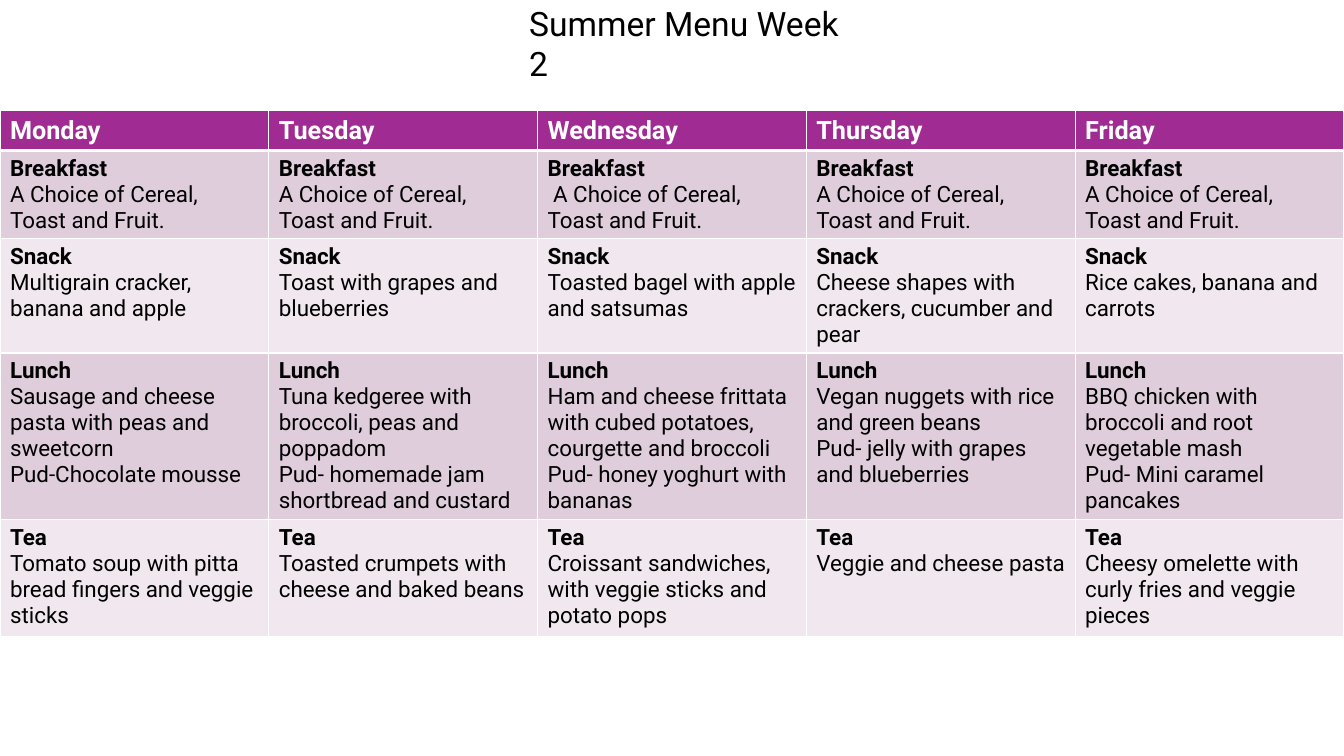
from dataclasses import dataclass

from lxml.etree import SubElement
from pptx import Presentation
from pptx.dml.color import RGBColor
from pptx.enum.text import MSO_AUTO_SIZE
from pptx.oxml.ns import qn
from pptx.slide import Slide
from pptx.table import _Cell
from pptx.text.text import TextFrame
from pptx.util import Inches, Pt


@dataclass(frozen=True)
class Theme:
    font: str = "Roboto"
    title_size: int = 24
    header_size: int = 18
    body_size: int = 16
    text: str = "000000"
    white: str = "FFFFFF"
    header_fill: str = "A02B93"
    dark_band: str = "DFCDDC"
    light_band: str = "F0E8EE"
    thin_border: int = 1
    thick_border: int = 3


@dataclass(frozen=True)
class Meal:
    name: str
    height: float
    dishes: tuple[tuple[str, ...], ...]  # one entry per day, one line per paragraph


THEME = Theme()
DAYS = ("Monday", "Tuesday", "Wednesday", "Thursday", "Friday")
HEADER_HEIGHT = 0.37
CEREAL = "A Choice of Cereal, Toast and Fruit."

MEALS = (
    Meal("Breakfast", 0.81, ((CEREAL,), (CEREAL,), (" " + CEREAL,), (CEREAL,), (CEREAL,))),
    Meal("Snack", 0.7, (
        ("Multigrain cracker, banana and apple",),
        ("Toast with grapes and blueberries",),
        ("Toasted bagel with apple and satsumas",),
        ("Cheese shapes with crackers, cucumber and pear",),
        ("Rice cakes, banana and carrots",),
    )),
    Meal("Lunch", 1.2, (
        ("Sausage and cheese pasta with peas and sweetcorn", "Pud-Chocolate mousse"),
        ("Tuna kedgeree with broccoli, peas and poppadom",
         "Pud- homemade jam shortbread and custard"),
        ("Ham and cheese frittata with cubed potatoes, courgette and broccoli",
         "Pud- honey yoghurt with bananas"),
        ("Vegan nuggets with rice and green beans", "Pud- jelly with grapes and blueberries"),
        ("BBQ chicken with broccoli and root vegetable mash", "Pud- Mini caramel pancakes"),
    )),
    Meal("Tea", 1.16, (
        ("Tomato soup with pitta bread fingers and veggie sticks",),
        ("Toasted crumpets with cheese and baked beans",),
        ("Croissant sandwiches, with veggie sticks and potato pops",),
        ("Veggie and cheese pasta",),
        ("Cheesy omelette with curly fries and veggie pieces",),
    )),
)


def write_lines(frame: TextFrame, lines: tuple[str, ...], size: int, color: str,
                bold_first: bool) -> None:
    """Write one paragraph per line; only the first may be bold."""
    for index, line in enumerate(lines):
        para = frame.paragraphs[0] if index == 0 else frame.add_paragraph()
        span = para.add_run()
        span.text = line
        font_values = {"name": THEME.font, "size": Pt(size), "bold": bold_first and index == 0}
        for name, value in font_values.items():
            setattr(span.font, name, value)
        span.font.color.rgb = RGBColor.from_string(color)


def add_borders(cell: _Cell, top: int, bottom: int) -> None:
    """Outline a cell in white; border elements must come before the fill."""
    properties = cell._tc.get_or_add_tcPr()
    thin = THEME.thin_border
    widths = {"a:lnL": thin, "a:lnR": thin, "a:lnT": top, "a:lnB": bottom}
    for position, (tag, width) in enumerate(widths.items()):
        line = SubElement(properties, qn(tag), w=str(Pt(width)))
        fill = SubElement(line, qn("a:solidFill"))
        SubElement(fill, qn("a:srgbClr"), val=THEME.white)
        properties.insert(position, line)


def fill_cell(cell: _Cell, color: str) -> None:
    cell.fill.solid()
    cell.fill.fore_color.rgb = RGBColor.from_string(color)


def add_title(page: Slide, text: str) -> None:
    box = page.shapes.add_textbox(Inches(5.15), Inches(-0.02), Inches(3.5), Inches(0.5))
    frame_values = {"word_wrap": True, "auto_size": MSO_AUTO_SIZE.SHAPE_TO_FIT_TEXT}
    for name, value in frame_values.items():
        setattr(box.text_frame, name, value)
    write_lines(box.text_frame, (text,), THEME.title_size, THEME.text, False)


def add_menu(page: Slide) -> None:
    table = page.shapes.add_table(len(MEALS) + 1, len(DAYS), Inches(0), Inches(1.1),
                                  Inches(13.33), Inches(5.33)).table
    heights = (HEADER_HEIGHT, *(meal.height for meal in MEALS))
    for row, height in zip(table.rows, heights):
        row.height = Inches(height)

    # Day headings
    for column, day in enumerate(DAYS):
        cell = table.cell(0, column)
        fill_cell(cell, THEME.header_fill)
        add_borders(cell, THEME.thin_border, THEME.thick_border)
        write_lines(cell.text_frame, (day,), THEME.header_size, THEME.white, True)

    # Meals in alternating bands
    for row, meal in enumerate(MEALS, start=1):
        band = THEME.dark_band if row % 2 else THEME.light_band
        top = THEME.thick_border if row == 1 else THEME.thin_border
        for column, dishes in enumerate(meal.dishes):
            cell = table.cell(row, column)
            fill_cell(cell, band)
            add_borders(cell, top, THEME.thin_border)
            write_lines(cell.text_frame, (meal.name, *dishes), THEME.body_size,
                        THEME.text, True)


def main() -> None:
    deck = Presentation()
    deck.slide_width, deck.slide_height = Inches(13.33), Inches(7.5)
    page = deck.slides.add_slide(deck.slide_layouts[6])
    add_menu(page)
    add_title(page, "Summer Menu Week 2")
    deck.save("out.pptx")


if __name__ == "__main__":
    main()
